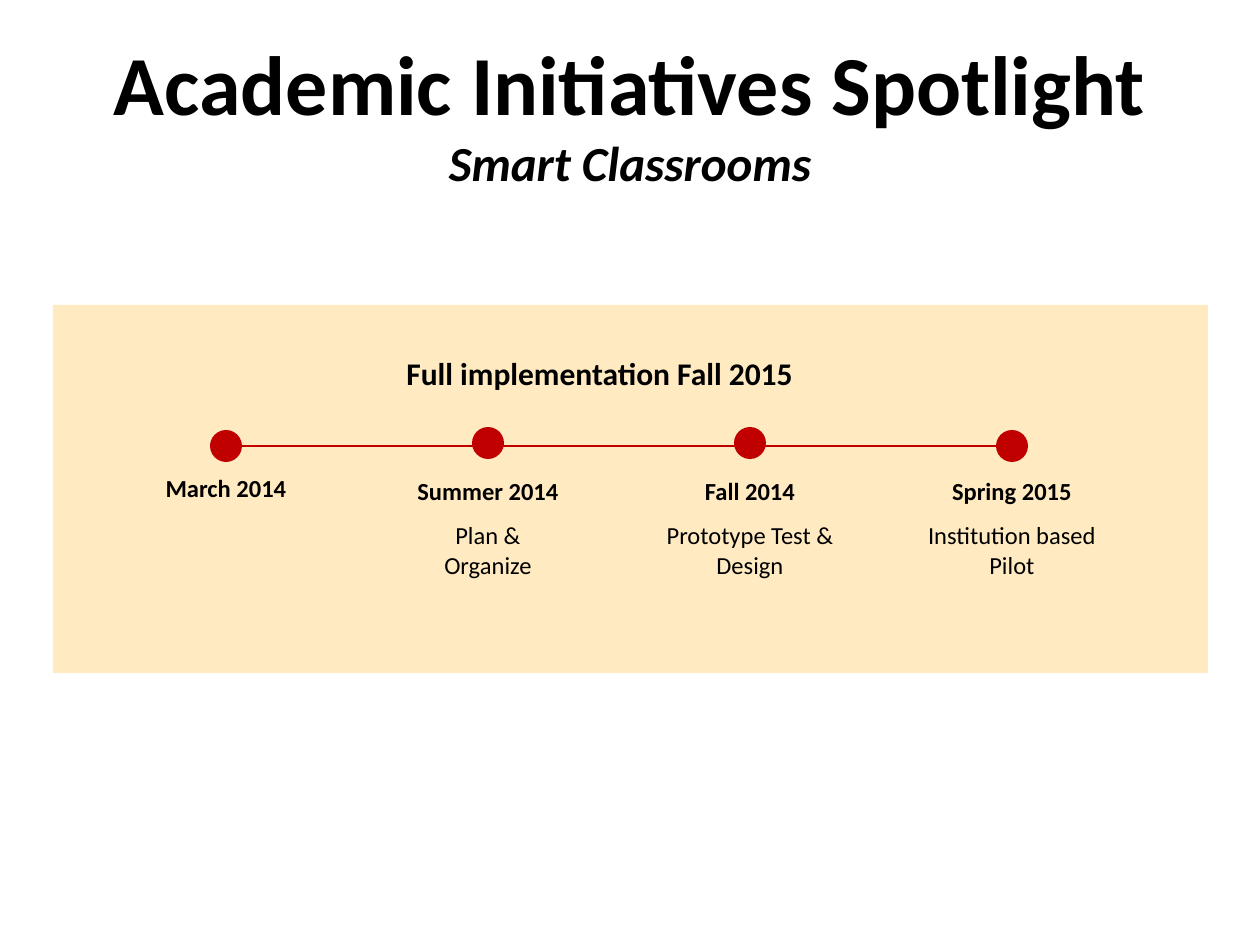
from lxml.etree import SubElement
from pptx import Presentation
from pptx.dml.color import RGBColor
from pptx.enum.shapes import MSO_CONNECTOR, MSO_SHAPE
from pptx.enum.text import MSO_AUTO_SIZE, PP_ALIGN
from pptx.oxml.ns import qn
from pptx.util import Emu, Pt

PX = 914400 // 126
COLORS = {"text": "000000", "panel": "FFBC37", "timeline": "C00000"}


def px(length):
    return Emu(length * PX)


class SlideBuilder:
    font = "Calibri"

    def __init__(self, slide):
        self.slide = slide

    def shape(self, kind, left, top, width, height, color, alpha=None):
        shape = self.slide.shapes.add_shape(
            kind, px(left), px(top), px(width), px(height))
        shape.shadow.inherit = False
        shape.fill.solid()
        shape.fill.fore_color.rgb = RGBColor.from_string(COLORS[color])
        shape.line.fill.background()
        if alpha is not None:
            fill_color = shape.fill._xPr.find(qn("a:solidFill"))[0]
            SubElement(fill_color, qn("a:alpha"), val=str(alpha * 1000))
        return shape

    def line(self, left, right, y, color, weight):
        line = self.slide.shapes.add_connector(
            MSO_CONNECTOR.STRAIGHT, px(left), px(y), px(right), px(y))
        line.line.color.rgb = RGBColor.from_string(COLORS[color])
        line.line.width = Pt(weight)
        SubElement(line._element.spPr, qn("a:effectLst"))
        return line

    def text(self, left, top, width, height, lines,
             align=PP_ALIGN.CENTER, inset=True):
        """Each line is (wording, size, bold, italic)."""
        box = self.slide.shapes.add_textbox(
            px(left), px(top), px(width), px(height))
        frame = box.text_frame
        frame.word_wrap = True
        frame.auto_size = MSO_AUTO_SIZE.SHAPE_TO_FIT_TEXT
        if not inset:
            frame.margin_left = frame.margin_right = 0
            frame.margin_top = frame.margin_bottom = 0
        para = frame.paragraphs[0]
        para.alignment = align
        for index, (wording, size, bold, italic) in enumerate(lines):
            if index:
                para.add_line_break()
            span = para.add_run()
            span.text = wording
            span.font.name = self.font
            span.font.size = Pt(size)
            span.font.bold = bold
            span.font.italic = italic
            span.font.color.rgb = RGBColor.from_string(COLORS["text"])
        return box


def main():
    deck = Presentation()
    deck.slide_width, deck.slide_height = px(1260), px(945)
    page = SlideBuilder(deck.slides.add_slide(deck.slide_layouts[6]))

    # Panel and title
    page.shape(MSO_SHAPE.RECTANGLE, 53, 305, 1155, 368, "panel", alpha=30)
    page.text(0, 32, 1260, 161, [
        ("Academic Initiatives Spotlight", 48, True, False),
        ("Smart Classrooms", 28, True, True),
    ], inset=False)

    # Timeline: milestones at equal steps
    first_center, step, dot = 226, 262, 32
    last_center = first_center + 3 * step
    page.line(first_center + dot // 2, last_center - dot // 2, 446,
              "timeline", 0.75)
    page.text(394, 348, 450, 50,
              [("Full implementation Fall 2015", 18, True, False)],
              align=PP_ALIGN.LEFT)

    # Date, detail, dot top, date top, detail width
    milestones = [
        ("March 2014", None, 430, 467, 0),
        ("Summer 2014", "Plan & Organize", 427, 470, 174),
        ("Fall 2014", "Prototype Test & Design", 427, 470, 230),
        ("Spring 2015", "Institution based Pilot", 430, 470, 230),
    ]
    for index, (date, detail, dot_top, date_top, width) in enumerate(milestones):
        center = first_center + index * step
        page.shape(MSO_SHAPE.OVAL, center - dot // 2, dot_top, dot, dot,
                   "timeline")
        page.text(center - 115, date_top, 230, 43, [(date, 14, True, False)])
        if detail:
            page.text(center - width // 2, 514, width, 72,
                      [(detail, 14, False, False)])

    deck.save("out.pptx")


if __name__ == "__main__":
    main()
